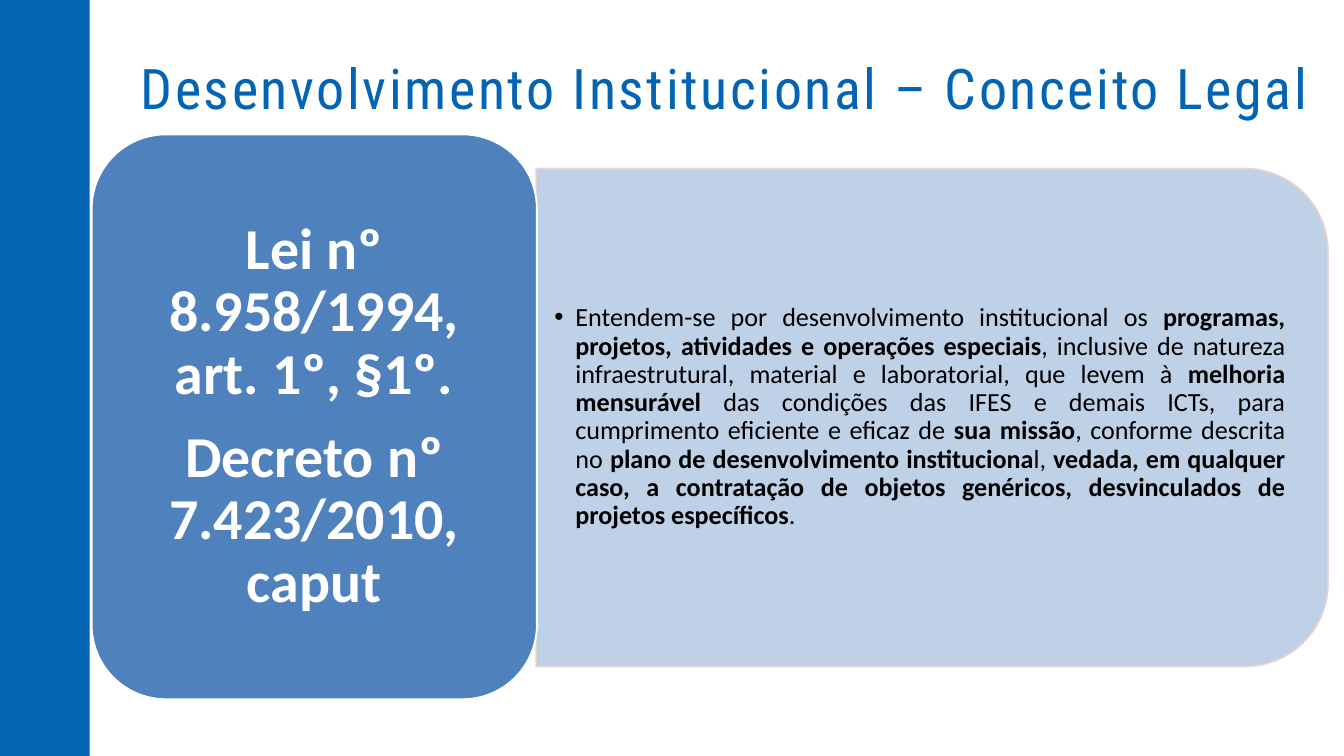
"""Build the slide on the legal concept of institutional development."""
import pptx
import pptx.dml.color
import pptx.enum.shapes
import pptx.enum.text
import pptx.oxml
import pptx.oxml.ns
import pptx.util

RGBColor = pptx.dml.color.RGBColor
Shapes = pptx.enum.shapes.MSO_SHAPE
Align = pptx.enum.text.PP_ALIGN
Anchor = pptx.enum.text.MSO_ANCHOR
Pt = pptx.util.Pt

BLUE = RGBColor(0x04, 0x64, 0xB4)
STEEL = RGBColor(0x4F, 0x81, 0xBD)
PALE = RGBColor(0xB9, 0xCD, 0xE5)
BLUSH = RGBColor(0xE8, 0xD0, 0xD0)
WHITE = RGBColor(0xFF, 0xFF, 0xFF)
BLACK = RGBColor(0x00, 0x00, 0x00)

SOURCES = ["Lei nº 8.958/1994, art. 1º, §1º.", "Decreto nº 7.423/2010, caput"]
DEFINITION = [
    ("Entendem-se por desenvolvimento institucional os ", False),
    ("programas, projetos, atividades e operações especiais", True),
    (", inclusive de natureza infraestrutural, material e laboratorial, que levem à ", False),
    ("melhoria mensurável ", True),
    ("das condições das IFES e demais ICTs, para cumprimento eficiente e eficaz de ", False),
    ("sua missão", True),
    (", conforme descrita no ", False),
    ("plano de desenvolvimento instituciona", True),
    ("l, ", False),
    ("vedada, em qualquer caso, a contratação de objetos genéricos, "
     "desvinculados de projetos específicos", True),
    (".", False),
]


def px(length):
    return pptx.util.Emu(length * 9525)


class Painter:
    """Hold the style and the current page, and draw each kind of element."""

    title_font = "Roboto Condensed"
    body_font = "Calibri"

    def __init__(self, page):
        self.page = page

    def place(self, box, left, top, width, height):
        box.left, box.top, box.width, box.height = map(px, (left, top, width, height))

    def frame(self, box, inset_x, inset_y, anchor):
        frame = box.text_frame
        frame.margin_left = frame.margin_right = px(inset_x)
        frame.margin_top = frame.margin_bottom = px(inset_y)
        frame.vertical_anchor = anchor
        frame.auto_size = pptx.enum.text.MSO_AUTO_SIZE.NONE
        frame.word_wrap = True
        return frame

    def style(self, span, name, size, color, bold=False):
        span.font.name = name
        span.font.size = Pt(size)
        span.font.color.rgb = color
        span.font.bold = bold

    def space(self, para, align, after):
        para.alignment = align
        para.line_spacing = 0.9
        para.space_before = Pt(0)
        para.space_after = Pt(after)

    def shape(self, kind, area, fill, line=None):
        box = self.page.shapes.add_shape(kind, *map(px, area))
        box.shadow.inherit = False
        box.fill.solid()
        box.fill.fore_color.rgb = fill
        if line is None:
            box.line.fill.background()
        else:
            box.line.color.rgb = line
            box.line.width = Pt(2)
        return box

    def fade(self, box, percent):
        for color in box._element.spPr.iter(pptx.oxml.ns.qn("a:srgbClr")):
            alpha = color.makeelement(pptx.oxml.ns.qn("a:alpha"), {"val": str(percent * 1000)})
            color.append(alpha)

    def title(self, text, area):
        box = self.page.shapes.title
        self.place(box, *area)
        frame = self.frame(box, 0, 0, Anchor.TOP)
        frame.word_wrap = False
        frame.text = text
        para = frame.paragraphs[0]
        para.alignment = Align.CENTER
        span = para.runs[0]
        self.style(span, self.title_font, 60, BLUE)
        span.font._element.set("spc", "280")

    def label(self, box, lines):
        frame = self.frame(box, 25, 13, Anchor.MIDDLE)
        frame.text = "\n".join(lines)
        for para in frame.paragraphs:
            self.space(para, Align.CENTER, 22)
            self.style(para.runs[0], self.body_font, 62, WHITE, True)

    def body(self, spans, area):
        box = self.page.placeholders[1]
        self.place(box, *area)
        self.page.shapes._spTree.append(box._element)
        para = self.frame(box, 26, 13, Anchor.MIDDLE).paragraphs[0]
        self.space(para, Align.JUSTIFY, 4)
        properties = para._p.get_or_add_pPr()
        properties.set("marL", str(px(30)))
        properties.set("indent", str(px(-30)))
        for text, bold in spans:
            span = para.add_run()
            span.text = text
            self.style(span, self.body_font, 28, BLACK, bold)


def main():
    deck = pptx.Presentation()
    deck.slide_width, deck.slide_height = px(1920), px(1080)
    painter = Painter(deck.slides.add_slide(deck.slide_layouts[1]))
    painter.title("Desenvolvimento Institucional – Conceito Legal", (200, 76, 1672, 97))
    painter.shape(Shapes.RECTANGLE, (-19, -24, 147, 1123), BLUE)
    panel = painter.shape(Shapes.ROUND_2_SAME_RECTANGLE, (976, 31, 711, 1131), PALE, BLUSH)
    panel.rotation = 90
    painter.fade(panel, 90)
    painter.body(DEFINITION, (766, 275, 1096, 642))
    card = painter.shape(Shapes.ROUNDED_RECTANGLE, (131, 192, 636, 807), STEEL, WHITE)
    painter.label(card, SOURCES)
    deck.save("out.pptx")


if __name__ == "__main__":
    main()
